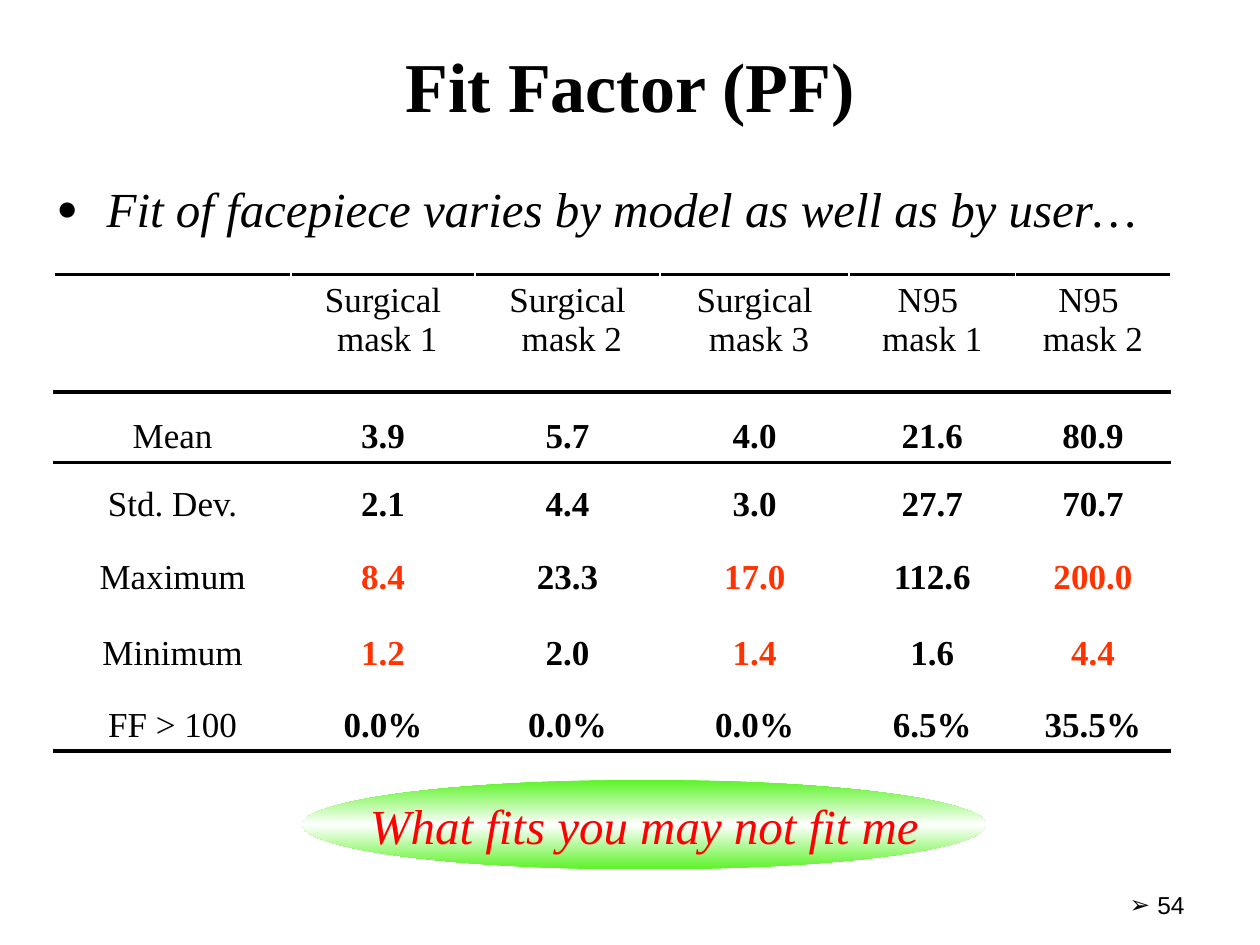
from copy import deepcopy

from lxml import etree
from pptx import Presentation
from pptx.dml.color import RGBColor
from pptx.enum import shapes, text
from pptx.oxml import ns
from pptx.util import Inches, Pt

BLACK = RGBColor(0x00, 0x00, 0x00)
RED = RGBColor(0xFF, 0x00, 0x00)
ORANGE = RGBColor(0xFF, 0x33, 0x00)
GREEN = RGBColor(0x5C, 0xF3, 0x27)
WHITE = RGBColor(0xFF, 0xFF, 0xFF)
SERIF = "Times New Roman"

TITLE = "Fit Factor (PF)"
STATEMENT = " Fit of facepiece varies by model as well as by user…"
CONCLUSION = "What fits you may not fit me"
PAGE_NUMBER = "54"
ROWS = [
    ["", "Surgical\n mask 1", "Surgical\n mask 2", "Surgical\n mask 3", "N95 \nmask 1", "N95 \nmask 2"],
    ["Mean", "3.9", "5.7", "4.0", "21.6", "80.9"],
    ["Std. Dev.", "2.1", "4.4", "3.0", "27.7", "70.7"],
    ["Maximum", "8.4", "23.3", "17.0", "112.6", "200.0"],
    ["Minimum", "1.2", "2.0", "1.4", "1.6", "4.4"],
    ["FF > 100", "0.0%", "0.0%", "0.0%", "6.5%", "35.5%"],
]
HIGHLIGHT_ROWS = ("Maximum", "Minimum")
HIGHLIGHT_COLUMNS = (1, 3, 5)
COLUMN_WIDTHS = [1.88, 1.46, 1.47, 1.5, 1.32, 1.23]
ROW_HEIGHTS = [0.93, 0.56, 0.54, 0.58, 0.6, 0.57]


def place(shape, left, top, width, height):
    shape.left, shape.top = Inches(left), Inches(top)
    shape.width, shape.height = Inches(width), Inches(height)


def write(frame, content, size, align, color=BLACK, font=SERIF, bold=False, italic=False):
    frame.text = content
    for paragraph in frame.paragraphs:
        paragraph.alignment = align
        for run in paragraph.runs:
            run.font.name, run.font.size = font, Pt(size)
            run.font.bold, run.font.italic = bold, italic
            run.font.color.rgb = color


def set_bullet(paragraph, character, indent, percent=100):
    properties = paragraph._p.get_or_add_pPr()
    properties.set("marL", str(Inches(indent)))
    properties.set("indent", str(-Inches(indent)))
    etree.SubElement(properties, ns.qn("a:buSzPct"), val=str(percent * 1000))
    etree.SubElement(properties, ns.qn("a:buFont"), typeface="Arial")
    etree.SubElement(properties, ns.qn("a:buChar"), char=character)


def set_border(cell, edge):
    line = etree.SubElement(cell._tc.get_or_add_tcPr(), ns.qn(f"a:ln{edge}"), w=str(Pt(2.25)))
    fill = etree.SubElement(line, ns.qn("a:solidFill"))
    etree.SubElement(fill, ns.qn("a:srgbClr"), val=str(BLACK))


def add_heading(slide):
    title = slide.shapes.title
    place(title, 0.75, 0.31, 8.5, 0.84)
    write(title.text_frame, TITLE, 40, text.PP_ALIGN.CENTER, bold=True)
    title.text_frame.auto_size = text.MSO_AUTO_SIZE.NONE
    title.text_frame.vertical_anchor = text.MSO_ANCHOR.MIDDLE
    title.text_frame.paragraphs[0].line_spacing = 0.8

    body = slide.placeholders[1]
    place(body, 0.35, 1.37, 9.37, 0.57)
    write(body.text_frame, STATEMENT, 28, text.PP_ALIGN.JUSTIFY, italic=True)
    body.text_frame.auto_size = text.MSO_AUTO_SIZE.NONE
    set_bullet(body.text_frame.paragraphs[0], "●", 0.3, 72)


def add_fit_table(slide):
    frame = slide.shapes.add_table(
        len(ROWS), len(COLUMN_WIDTHS), Inches(0.43), Inches(2.18),
        Inches(sum(COLUMN_WIDTHS)), Inches(sum(ROW_HEIGHTS)))
    table = frame.table
    table.first_row = table.horz_banding = False
    for column, width in zip(table.columns, COLUMN_WIDTHS):
        column.width = Inches(width)
    for row, height in zip(table.rows, ROW_HEIGHTS):
        row.height = Inches(height)
    for r, values in enumerate(ROWS):
        for c, value in enumerate(values):
            cell = table.cell(r, c)
            highlighted = values[0] in HIGHLIGHT_ROWS and c in HIGHLIGHT_COLUMNS
            write(cell.text_frame, value, 20, text.PP_ALIGN.CENTER,
                  color=ORANGE if highlighted else BLACK, bold=r > 0 and c > 0)
            cell.vertical_anchor = text.MSO_ANCHOR.BOTTOM if r else text.MSO_ANCHOR.TOP
            if r in (0, 1):
                set_border(cell, "T")
            if r in (0, len(ROWS) - 1):
                set_border(cell, "B")
            cell.fill.background()


def add_conclusion(slide):
    ellipse = slide.shapes.add_shape(
        shapes.MSO_SHAPE.OVAL, Inches(2.4), Inches(6.19), Inches(5.43), Inches(0.71))
    ellipse.shadow.inherit = False
    ellipse.line.fill.background()
    ellipse.fill.gradient()
    ellipse.fill.gradient_angle = 90
    stop_list = ellipse.element.xpath(".//a:gsLst")[0]
    stop_list.append(deepcopy(stop_list[0]))
    for stop, position, color in zip(ellipse.fill.gradient_stops, (0, 0.5, 1), (GREEN, WHITE, GREEN)):
        stop.position, stop.color.rgb = position, color
    write(ellipse.text_frame, CONCLUSION, 28, text.PP_ALIGN.CENTER, color=RED, italic=True)
    ellipse.text_frame.word_wrap = False
    ellipse.text_frame.vertical_anchor = text.MSO_ANCHOR.MIDDLE


def add_page_number(slide):
    box = slide.shapes.add_textbox(Inches(7.17), Inches(7.13), Inches(2.33), Inches(0.35))
    place(box, 7.17, 6.83, 2.33, 0.52)
    box.text_frame.word_wrap = True
    box.text_frame.vertical_anchor = text.MSO_ANCHOR.BOTTOM
    write(box.text_frame, PAGE_NUMBER, 14, text.PP_ALIGN.RIGHT, font="Arial")
    set_bullet(box.text_frame.paragraphs[0], "➢", 0.22)


def main():
    presentation = Presentation()
    presentation.slide_width, presentation.slide_height = Inches(10), Inches(7.5)
    slide = presentation.slides.add_slide(presentation.slide_layouts[1])
    add_conclusion(slide)
    add_heading(slide)
    add_fit_table(slide)
    add_page_number(slide)
    presentation.save("out.pptx")


if __name__ == "__main__":
    main()
